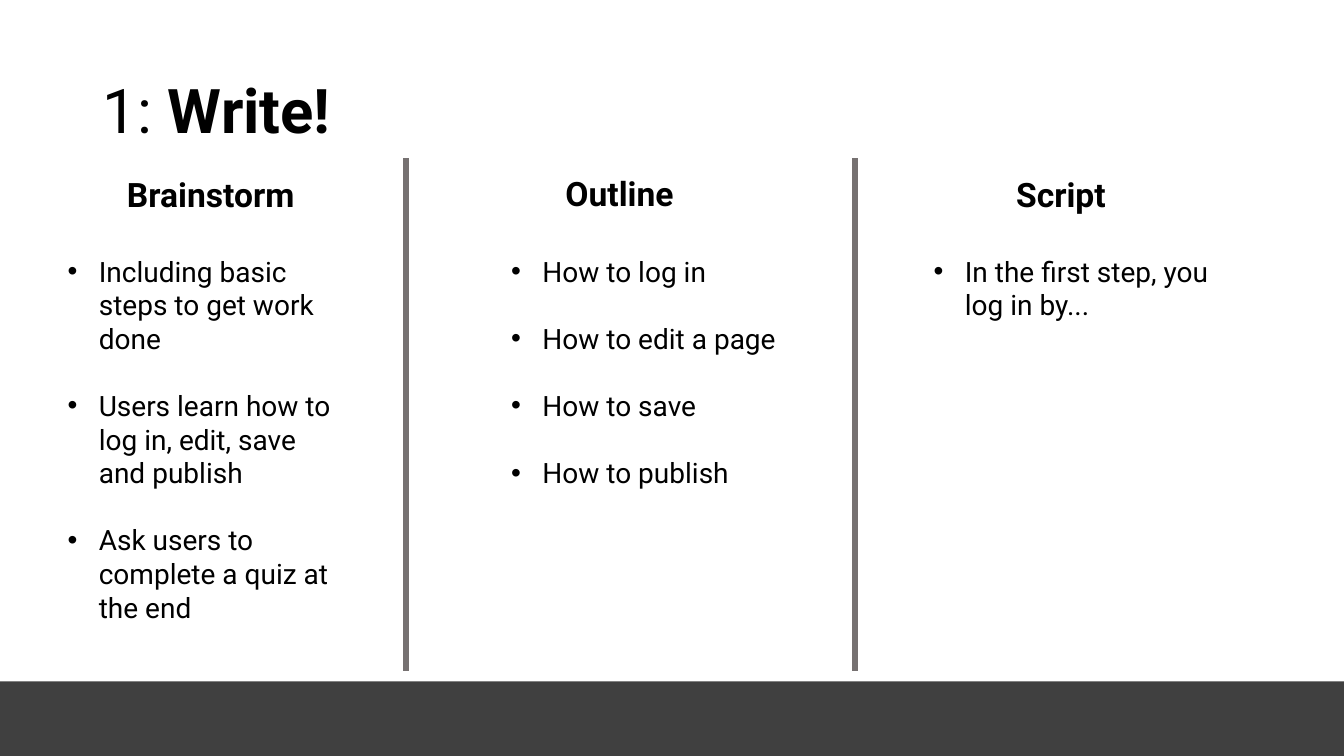
import pptx
import pptx.dml.color
import pptx.enum.shapes
import pptx.enum.text
import pptx.oxml.ns
import pptx.util
from lxml import etree

Inches = pptx.util.Inches
Pt = pptx.util.Pt
Color = pptx.dml.color.RGBColor
Anchor = pptx.enum.text.MSO_ANCHOR

BLACK = Color(0x00, 0x00, 0x00)
GRAY = Color(0x76, 0x71, 0x71)
DARK = Color(0x40, 0x40, 0x40)

# Each column: heading, its left, top and width, list left and height, items
COLUMNS = [
    ("Brainstorm", 1.16, 1.68, 2.08, 0.57, 4.71,
     ["Including basic steps to get work done",
      "Users learn how to log in, edit, save and publish",
      "Ask users to complete a quiz at the end"]),
    ("Outline", 5.51, 1.67, 1.53, 4.97, 2.46,
     ["How to log in", "How to edit a page", "How to save", "How to publish"]),
    ("Script", 9.98, 1.68, 1.29, 9.16, 0.77,
     ["In the first step, you log in by..."]),
]


def write(para, text, size=20, bold=False, color=BLACK, font="Roboto"):
    """Append one formatted run to a paragraph."""
    run = para.add_run()
    run.text = text
    run.font.name = font
    run.font.size = Pt(size)
    run.font.bold = bold
    run.font.color.rgb = color


class Deck:
    def __init__(self):
        self.prs = pptx.Presentation()
        self.prs.slide_width = Inches(13.33)
        self.prs.slide_height = Inches(7.5)
        self.slide = self.prs.slides.add_slide(self.prs.slide_layouts.get_by_name("Comparison"))
        self.shapes = self.slide.shapes

    def place(self, shape, left, top, width, height, anchor):
        """Move a placeholder and return its text frame."""
        shape.left, shape.top = Inches(left), Inches(top)
        shape.width, shape.height = Inches(width), Inches(height)
        frame = shape.text_frame
        frame.word_wrap = True
        frame.auto_size = pptx.enum.text.MSO_AUTO_SIZE.NONE
        frame.vertical_anchor = anchor
        return frame

    def title(self, lead, strong):
        frame = self.place(self.shapes.title, 0.92, 0.4, 11.5, 1.45, Anchor.MIDDLE)
        para = frame.paragraphs[0]
        para.alignment = pptx.enum.text.PP_ALIGN.LEFT
        para.line_spacing = 0.9
        write(para, lead, size=44)
        write(para, strong, size=44, bold=True)

    def head(self, text, left, top, width):
        box = self.shapes.add_textbox(Inches(left), Inches(top), Inches(width), Inches(0.5))
        box.text_frame.word_wrap = True
        write(box.text_frame.paragraphs[0], text, size=24, bold=True)

    def bullets(self, idx, items, left, height):
        frame = self.place(self.slide.placeholders[idx], left, 2.47, 2.95, height, Anchor.TOP)
        for i, item in enumerate(items):
            para = frame.add_paragraph() if i else frame.paragraphs[0]
            props = para._p.get_or_add_pPr()
            props.set("marL", str(Inches(0.31)))
            props.set("indent", str(Inches(-0.31)))
            font = etree.SubElement(props, pptx.oxml.ns.qn("a:buFont"))
            font.set("typeface", "Arial")
            mark = etree.SubElement(props, pptx.oxml.ns.qn("a:buChar"))
            mark.set("char", "•")
            para.space_before = Pt(24 if i else 0)
            write(para, item)

    def rule(self, left):
        """Draw a vertical divider."""
        line = self.shapes.add_connector(
            pptx.enum.shapes.MSO_CONNECTOR.STRAIGHT,
            Inches(left), Inches(1.57), Inches(left), Inches(6.66))
        line.line.color.rgb = GRAY
        line.line.width = Pt(4.5)
        etree.SubElement(line._element.spPr, pptx.oxml.ns.qn("a:effectLst"))

    def band(self):
        """Draw the dark strip along the bottom."""
        bar = self.shapes.add_shape(
            pptx.enum.shapes.MSO_SHAPE.RECTANGLE,
            0, Inches(6.76), self.prs.slide_width, Inches(0.74))
        bar.shadow.inherit = False
        bar.fill.solid()
        bar.fill.fore_color.rgb = DARK
        bar.line.fill.background()

    def prune(self):
        """Remove placeholders left empty."""
        for shape in list(self.slide.placeholders):
            if not shape.text_frame.text:
                shape._element.getparent().remove(shape._element)


def main():
    deck = Deck()
    deck.band()
    deck.title("1: ", "Write!")
    for idx, (name, left, top, width, edge, height, items) in enumerate(COLUMNS, 1):
        deck.head(name, left, top, width)
        deck.bullets(idx, items, edge, height)
    for left in (4.03, 8.48):
        deck.rule(left)
    deck.prune()
    deck.prs.save("out.pptx")


if __name__ == "__main__":
    main()
